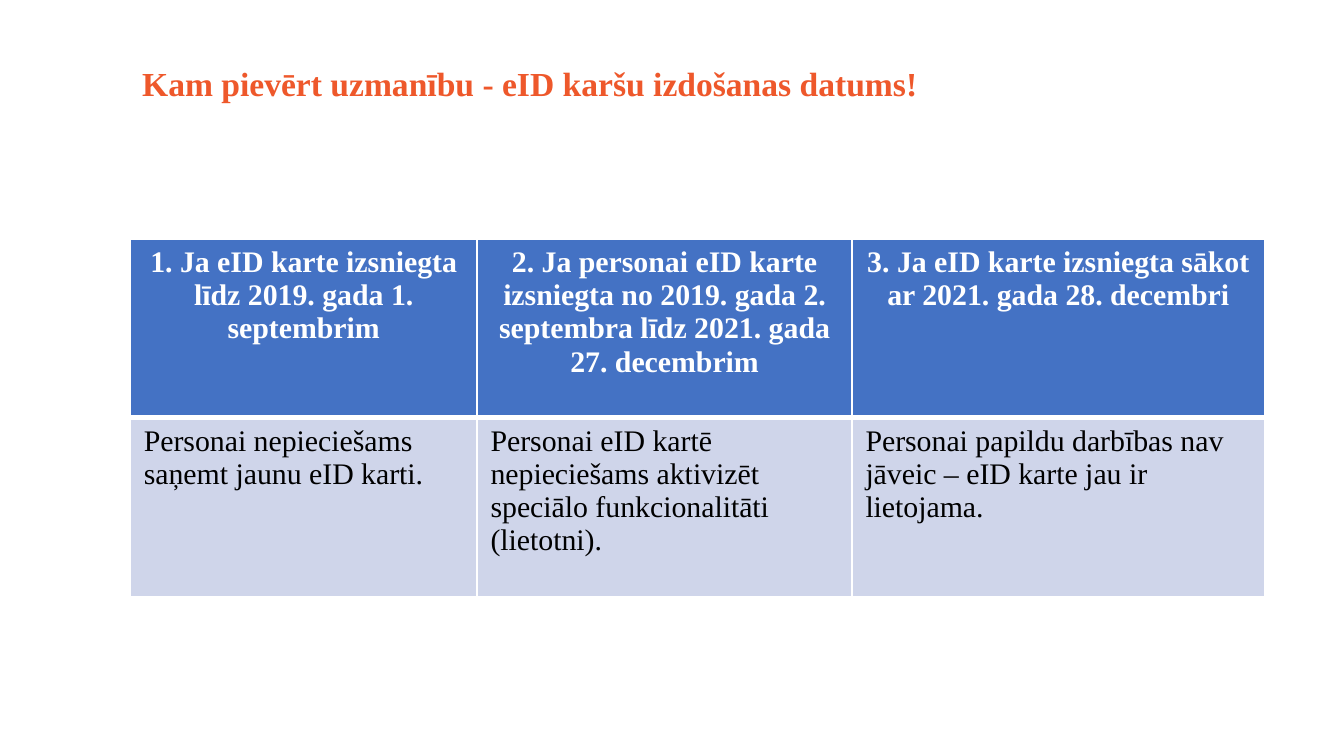
from lxml import etree
from pptx import Presentation
from pptx.dml.color import RGBColor
from pptx.enum.text import MSO_ANCHOR, PP_ALIGN
from pptx.oxml.ns import qn
from pptx.util import Inches, Pt

FONT = "Times New Roman"
WHITE, BLACK = "FFFFFF", "000000"
ORANGE, BLUE, PALE = "EE582B", "4472C4", "CFD5EA"

TITLE = "Kam pievērt uzmanību - eID karšu izdošanas datums!"
HEADS = [
    "1. Ja eID karte izsniegta līdz 2019. gada 1. septembrim",
    "2. Ja personai eID karte izsniegta no 2019. gada 2. septembra "
    "līdz 2021. gada 27. decembrim",
    "3. Ja eID karte izsniegta sākot ar 2021. gada 28. decembri",
]
NOTES = [
    "Personai nepieciešams saņemt jaunu eID karti.",
    "Personai eID kartē nepieciešams aktivizēt speciālo funkcionalitāti (lietotni).",
    "Personai papildu darbības nav jāveic – eID karte jau ir lietojama.",
]


def color(code):
    return RGBColor.from_string(code)


def add_run(para, text, size, code, bold):
    run = para.add_run()
    run.text = text
    font = run.font
    font.name, font.size, font.bold = FONT, Pt(size), bold
    font.color.rgb = color(code)


def add_edge(cell, side, width):
    """Draw one white cell border."""
    props = cell._tc.get_or_add_tcPr()
    line = etree.SubElement(props, qn(f"a:ln{side}"), w=str(Pt(width)))
    fill = etree.SubElement(line, qn("a:solidFill"))
    etree.SubElement(fill, qn("a:srgbClr"), val=WHITE)


def add_title(slide, left, top, width, height):
    box = slide.shapes.add_textbox(
        Inches(left), Inches(top), Inches(width), Inches(height))
    frame = box.text_frame
    frame.word_wrap = True
    frame.vertical_anchor = MSO_ANCHOR.TOP
    add_run(frame.paragraphs[0], TITLE, 18, ORANGE, True)


def add_grid(slide, left, top, widths, height):
    rows = [(HEADS, BLUE, WHITE, True, PP_ALIGN.CENTER),
            (NOTES, PALE, BLACK, False, PP_ALIGN.LEFT)]
    table = slide.shapes.add_table(
        len(rows), len(widths), Inches(left), Inches(top),
        Inches(sum(widths)), Inches(height)).table
    for col, width in zip(table.columns, widths):
        col.width = Inches(width)
    for r, (texts, back, ink, bold, align) in enumerate(rows):
        # A thick rule parts the head from the body
        edges = {"L": 1, "R": 1, "T": 3 if r else 1, "B": 1 if r else 3}
        for c, text in enumerate(texts):
            cell = table.cell(r, c)
            for side, width in edges.items():
                add_edge(cell, side, width)
            cell.fill.solid()
            cell.fill.fore_color.rgb = color(back)
            para = cell.text_frame.paragraphs[0]
            para.alignment = align
            add_run(para, text, 16, ink, bold)


def main():
    deck = Presentation()
    # Widescreen, 16 by 9
    deck.slide_width = Inches(10)
    deck.slide_height = deck.slide_width * 9 // 16
    slide = deck.slides.add_slide(deck.slide_layouts[6])
    add_title(slide, 0.96, 0.42, 8.44, 1)
    add_grid(slide, 0.97, 1.78, [2.58, 2.79, 3.07], 2.66)
    deck.save("out.pptx")


if __name__ == "__main__":
    main()
